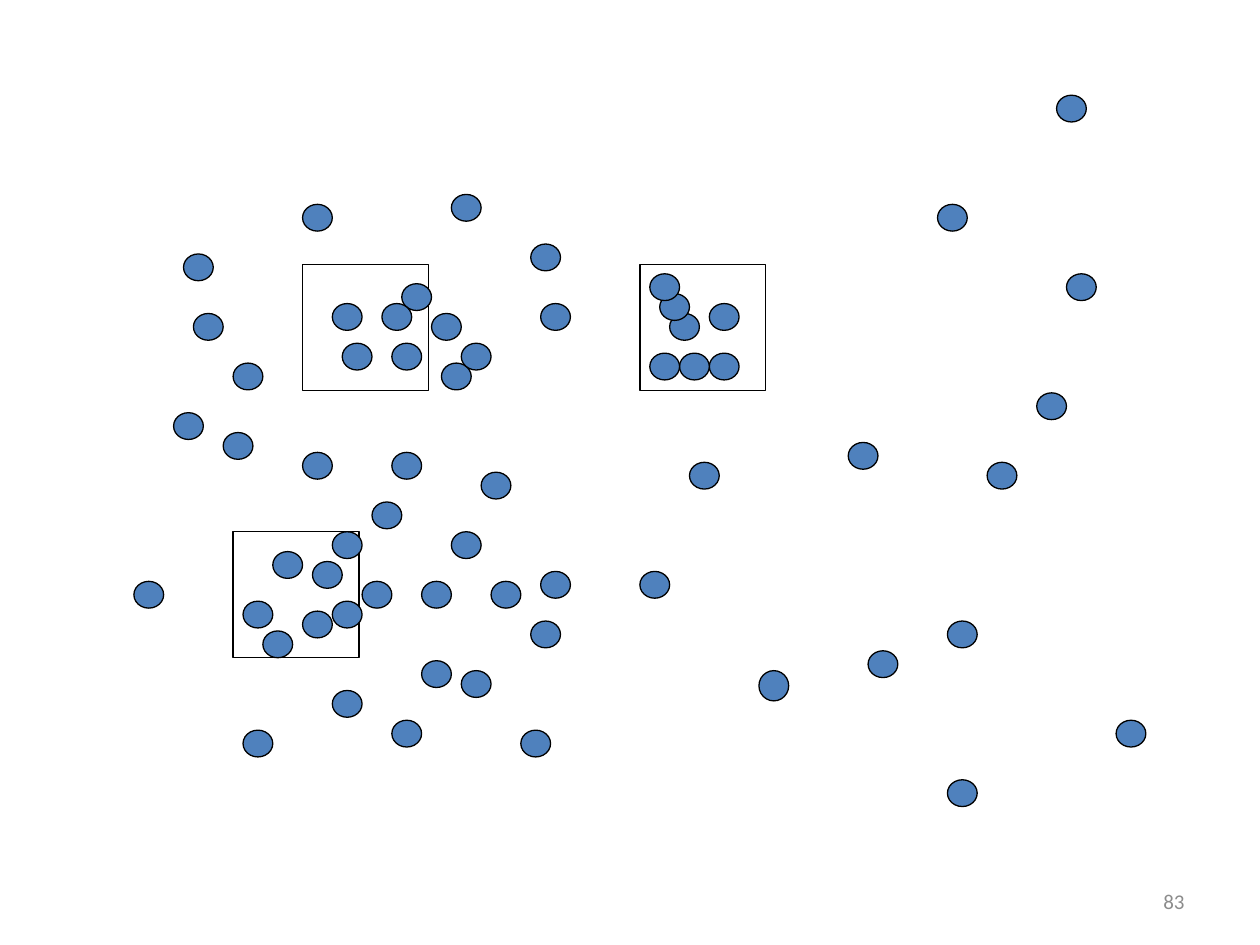
from pptx import Presentation
from pptx import util as u
from pptx.dml.color import RGBColor
from pptx.enum import shapes, text

BLUE = RGBColor(0x4F, 0x81, 0xBD)
BLACK = RGBColor(0, 0, 0)
WHITE = RGBColor(0xFF, 0xFF, 0xFF)
GREY = RGBColor(0x8C, 0x8C, 0x8C)

# Dots sit on a 0.2 cm grid: (column, row), from back to front
STEP, GRID_X, GRID_Y = 0.2, 0.1, 0.12
DOT_W, DOT_H, TALL_DOT_H = 0.6, 0.54, 0.61
TALL_DOT = (76, 67)

UPPER_LEFT = [
    (40, 28), (43, 31), (39, 34), (44, 36), (46, 34), (33, 30), (38, 30),
    (34, 34), (19, 31), (54, 30), (17, 41), (23, 36), (30, 20), (53, 24),
    (45, 19), (22, 43), (18, 25), (30, 45), (39, 45), (48, 47), (37, 50),
]
UPPER_RIGHT_SQUARE = [
    (67, 31), (66, 29), (65, 27), (71, 35), (71, 30), (68, 35), (65, 35),
]
LOWER_LEFT = [
    (45, 53), (49, 58), (42, 58), (52, 73), (46, 67), (42, 66), (39, 72),
    (24, 73), (53, 62), (54, 57), (33, 69), (13, 58), (26, 63), (31, 56),
    (24, 60), (33, 53), (27, 55), (36, 58), (33, 60), (30, 61),
]
RIGHT = [
    (106, 9), (99, 46), (95, 62), (104, 39), (69, 46), (64, 57), (94, 20),
    (85, 44), (95, 78), (107, 27), (112, 72), (87, 65),
]
SQUARE_SIDE = 2.54
SQUARES = [(12.9, 5.33), (4.7, 10.72), (6.1, 5.33)]


def write(tf, content, size=12, font="Calibri", color=GREY,
          align=text.PP_ALIGN.RIGHT):
    p = tf.paragraphs[0]
    p.alignment = align
    r = p.add_run()
    r.text = content
    r.font.size = u.Pt(size)
    r.font.name = font
    r.font.color.rgb = color


class Canvas:
    def __init__(self, s, line=BLACK, weight=0.75):
        self.s, self.line, self.weight = s, line, weight

    def shape(self, kind, x, y, w, h, fill):
        sp = self.s.shapes.add_shape(kind, u.Cm(x), u.Cm(y), u.Cm(w), u.Cm(h))
        sp.shadow.inherit = False
        sp.fill.solid()
        sp.fill.fore_color.rgb = fill
        sp.line.color.rgb = self.line
        sp.line.width = u.Pt(self.weight)

    def square(self, x, y):
        self.shape(shapes.MSO_SHAPE.RECTANGLE, x, y,
                   SQUARE_SIDE, SQUARE_SIDE, WHITE)

    def dot(self, col, row, h=DOT_H):
        self.shape(shapes.MSO_SHAPE.OVAL, GRID_X + col * STEP,
                   GRID_Y + row * STEP, DOT_W, h, BLUE)

    def label(self, content, x, y, w, h):
        sp = self.s.shapes.add_textbox(u.Cm(x), u.Cm(y), u.Cm(w), u.Cm(h))
        tf = sp.text_frame
        tf.word_wrap = True
        tf.vertical_anchor = text.MSO_ANCHOR.MIDDLE
        write(tf, content)


def main():
    prs = Presentation()
    prs.slide_width, prs.slide_height = u.Cm(25.4), u.Cm(19.05)
    c = Canvas(prs.slides.add_slide(prs.slide_layouts[6]))

    # Slide number
    c.label("83", 18.2, 17.66, 5.93, 1.01)

    # Sampling squares
    for x, y in SQUARES:
        c.square(x, y)

    # Scattered dots
    for col, row in UPPER_LEFT + UPPER_RIGHT_SQUARE + LOWER_LEFT + RIGHT:
        c.dot(col, row)
    c.dot(*TALL_DOT, h=TALL_DOT_H)

    prs.save("out.pptx")


if __name__ == "__main__":
    main()
